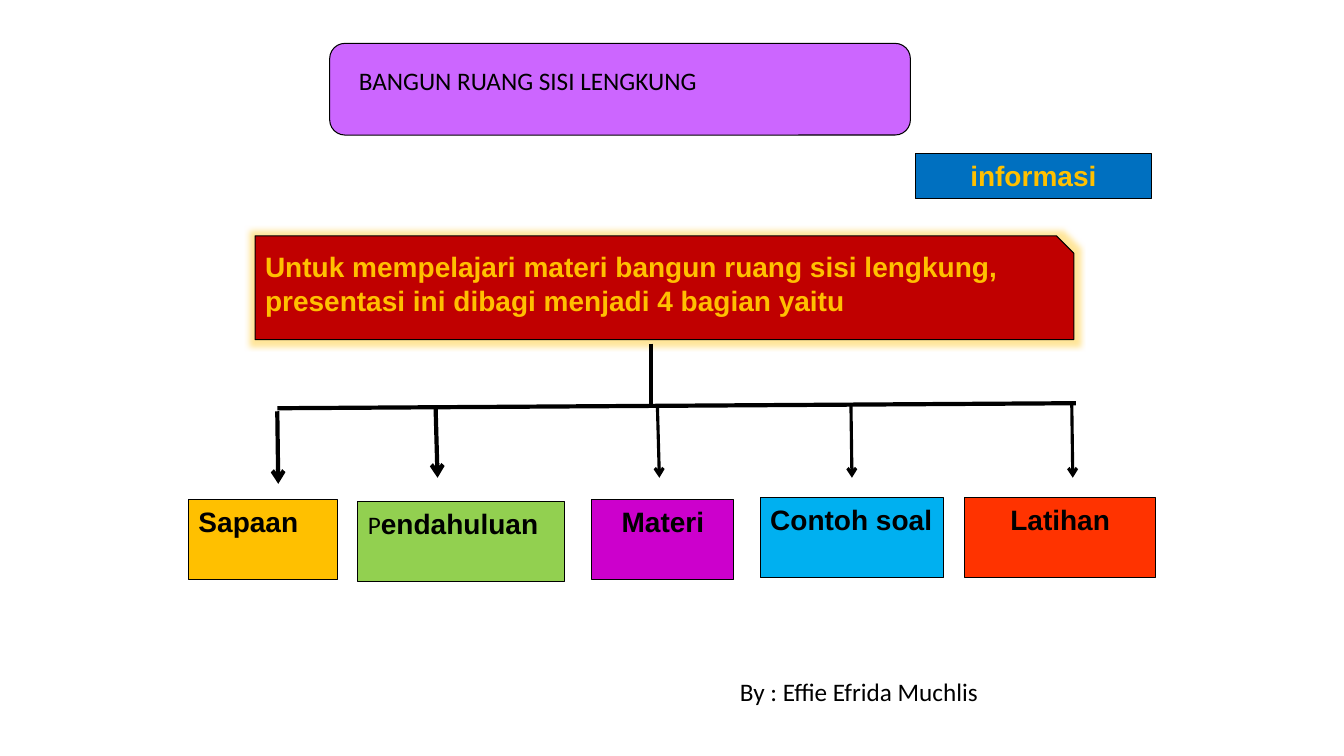
from dataclasses import dataclass

from lxml import etree
from pptx import Presentation
from pptx.dml.color import RGBColor
from pptx.enum import shapes, text
from pptx.oxml import ns
from pptx.util import Inches, Pt

LEFT, CENTER = text.PP_ALIGN.LEFT, text.PP_ALIGN.CENTER
TOP = text.MSO_ANCHOR.TOP
RECT = shapes.MSO_SHAPE.RECTANGLE


@dataclass(frozen=True)
class Theme:
    black: str = "000000"
    gold: str = "FFC000"
    red: str = "C00000"
    blue: str = "0070C0"
    violet: str = "CC66FF"
    green: str = "92D050"
    magenta: str = "CC00CC"
    sky: str = "00B0F0"
    orange: str = "FF3300"
    label_font: str = "Arial"
    label_size: float = 20
    plain_font: str = "Calibri"
    plain_size: float = 18
    outline: float = 0.75
    thin: float = 2.25
    thick: float = 3


THEME = Theme()


@dataclass(frozen=True)
class Box:
    label: str
    at: tuple[float, float, float, float]
    fill: str
    color: str = THEME.black
    align: text.PP_ALIGN = LEFT
    kind: shapes.MSO_SHAPE = RECT
    plain_prefix: str = ""


@dataclass(frozen=True)
class Line:
    start: tuple[float, float]
    end: tuple[float, float]
    width: float = THEME.thick
    arrow: bool = False


PANEL = Box("", (3.27, 0.43, 5.76, 0.91), THEME.violet,
            kind=shapes.MSO_SHAPE.ROUNDED_RECTANGLE)
BANNER = Box("Untuk mempelajari materi bangun ruang sisi lengkung, "
             "presentasi ini dibagi menjadi 4 bagian yaitu",
             (2.53, 2.34, 8.12, 1.03), THEME.red, THEME.gold,
             kind=shapes.MSO_SHAPE.SNIP_1_RECTANGLE)
BOXES = [
    Box("informasi", (9.08, 1.52, 2.34, 0.45), THEME.blue, THEME.gold, CENTER),
    Box("Sapaan", (1.87, 4.96, 1.48, 0.79), THEME.gold),
    Box("endahuluan", (3.55, 4.98, 2.05, 0.79), THEME.green, plain_prefix="P"),
    Box("Materi", (5.87, 4.96, 1.41, 0.79), THEME.magenta, align=CENTER),
    Box("Contoh soal", (7.54, 4.94, 1.82, 0.79), THEME.sky),
    Box("Latihan", (9.57, 4.94, 1.89, 0.79), THEME.orange, align=CENTER),
]
LINES = [
    Line((6.46, 3.41), (6.46, 4.02)),
    Line((2.75, 4.05), (10.67, 4.0)),
    Line((2.75, 4.08), (2.76, 4.8), arrow=True),
    Line((4.32, 4.02), (4.34, 4.74), arrow=True),
    Line((6.52, 4.01), (6.54, 4.74), THEME.thin, True),
    Line((8.44, 4.01), (8.45, 4.74), THEME.thin, True),
    Line((10.63, 4.01), (10.64, 4.74), THEME.thin, True),
]


def rgb(value: str) -> RGBColor:
    return RGBColor.from_string(value)


def style_run(r, color: str, plain: bool = False) -> None:
    r.font.name = THEME.plain_font if plain else THEME.label_font
    r.font.size = Pt(THEME.plain_size if plain else THEME.label_size)
    r.font.bold = not plain
    r.font.color.rgb = rgb(color)


def add_box(s, box: Box):
    sp = s.shapes.add_shape(box.kind, *map(Inches, box.at))
    sp.shadow.inherit = False
    sp.fill.solid()
    sp.fill.fore_color.rgb = rgb(box.fill)
    sp.line.color.rgb = rgb(THEME.black)
    sp.line.width = Pt(THEME.outline)
    tf = sp.text_frame
    tf.word_wrap = True
    tf.vertical_anchor = TOP
    p = tf.paragraphs[0]
    p.alignment = box.align
    for part, plain in ((box.plain_prefix, True), (box.label, False)):
        if part:
            r = p.add_run()
            r.text = part
            style_run(r, box.color, plain)
    return sp


def add_glow(sp, color: str, radius: float, opacity: int) -> None:
    effects = sp._element.spPr.find(ns.qn("a:effectLst"))
    glow = etree.SubElement(effects, ns.qn("a:glow"), rad=str(Pt(radius)))
    tint = etree.SubElement(glow, ns.qn("a:srgbClr"), val=color)
    etree.SubElement(tint, ns.qn("a:alpha"), val=str(opacity * 1000))


def add_line(s, line: Line) -> None:
    points = map(Inches, line.start + line.end)
    cxn = s.shapes.add_connector(shapes.MSO_CONNECTOR.STRAIGHT, *points)
    cxn.line.color.rgb = rgb(THEME.black)
    cxn.line.width = Pt(line.width)
    if line.arrow:
        etree.SubElement(cxn.line._get_or_add_ln(), ns.qn("a:tailEnd"), type="arrow")
    etree.SubElement(cxn._element.spPr, ns.qn("a:effectLst"))


def set_plain_text(sp, words: str) -> None:
    tf = sp.text_frame
    tf.text = words
    tf.word_wrap = True
    tf.vertical_anchor = TOP
    tf.auto_size = text.MSO_AUTO_SIZE.SHAPE_TO_FIT_TEXT
    p = tf.paragraphs[0]
    p.alignment = LEFT
    style_run(p.runs[0], THEME.black, plain=True)


def main() -> None:
    prs = Presentation()
    prs.slide_width, prs.slide_height = Inches(13.33), Inches(7.5)
    s = prs.slides.add_slide(prs.slide_layouts[5])

    # Title on its panel
    add_box(s, PANEL)
    title = s.shapes.title
    title.left, title.top, title.width, title.height = map(Inches, (3.46, 0.6, 5.29, 0.4))
    set_plain_text(title, "BANGUN RUANG SISI LENGKUNG")
    s.shapes._spTree.append(title._element)  # bring in front of the panel

    # Banner, tree lines and section boxes
    add_glow(add_box(s, BANNER), THEME.gold, radius=8, opacity=40)
    for line in LINES:
        add_line(s, line)
    for box in BOXES:
        add_box(s, box)

    # Author
    author = s.shapes.add_textbox(*map(Inches, (7.24, 6.66, 3.9, 0.4)))
    set_plain_text(author, "By : Effie Efrida Muchlis")

    prs.save("out.pptx")


if __name__ == "__main__":
    main()
